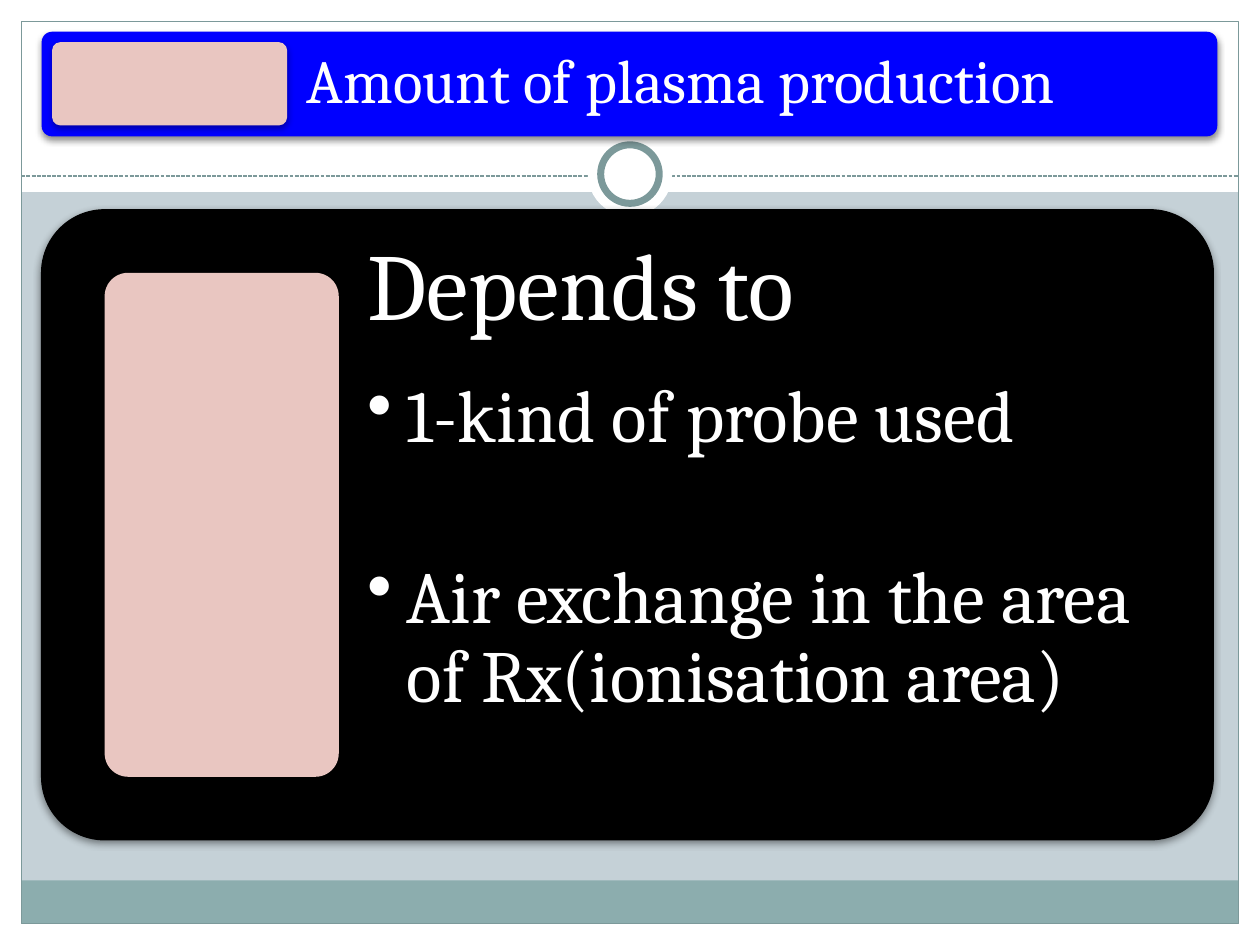
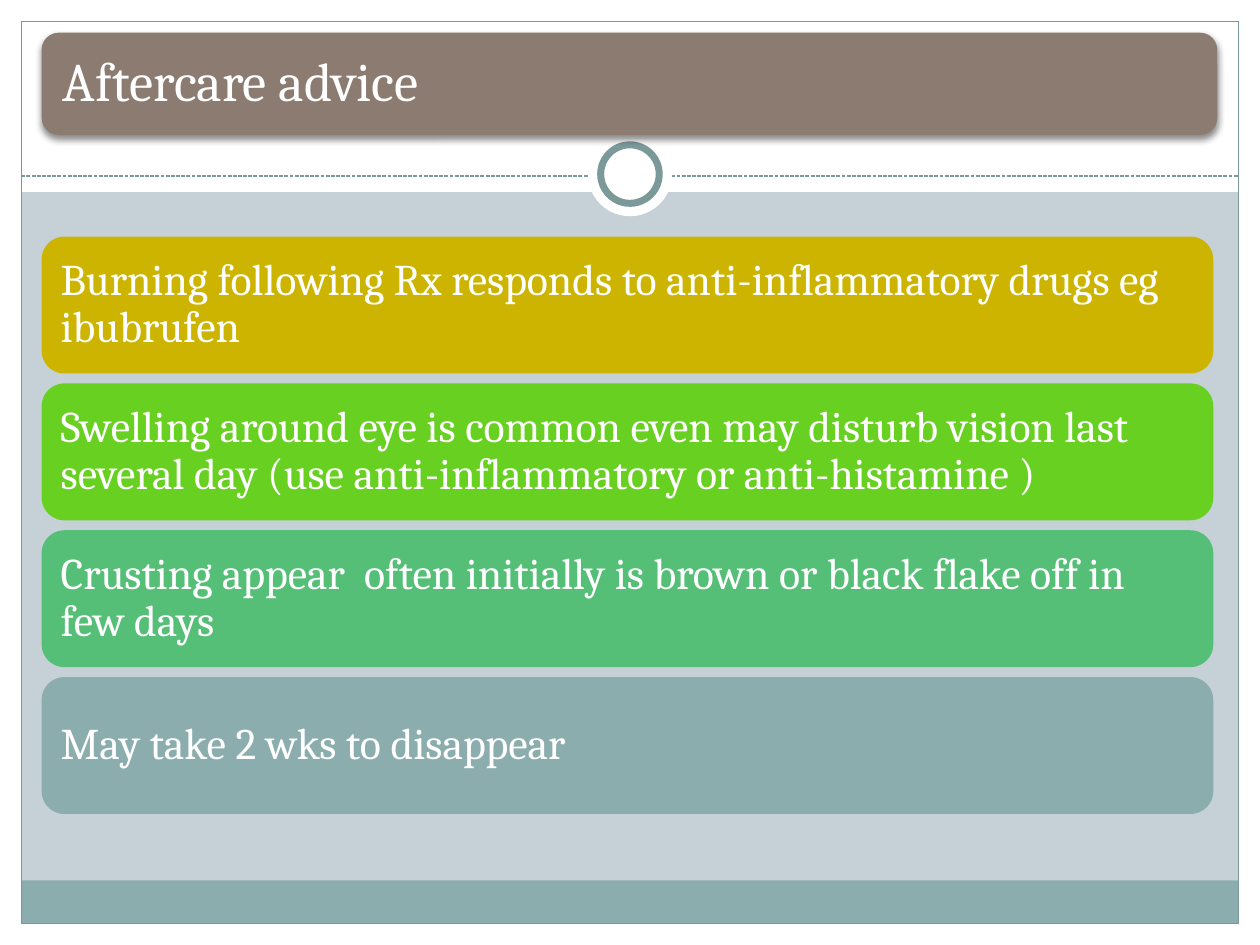
from lxml import etree
from pptx import Presentation
from pptx.dml.color import RGBColor
from pptx.enum.dml import MSO_LINE_DASH_STYLE as DASH
from pptx.enum.shapes import MSO_CONNECTOR as CONNECTOR, MSO_SHAPE as SHAPE
from pptx.enum.text import MSO_ANCHOR as ANCHOR, PP_ALIGN as ALIGN
from pptx.oxml import parse_xml
from pptx.oxml.ns import nsdecls, qn
from pptx.util import Cm, Pt

FONT = "Cambria"
WIDTH, HEIGHT = 25.4, 19.05
MARGIN = 0.43
LEFT = 0.84
HEADER_W, BODY_W = 23.7, 23.62
COLORS = {
    "white": "FFFFFF",
    "black": "000000",
    "background": "C5D1D7",
    "teal": "8CADAE",
    "outline": "7C999A",
    "blue": "0000FF",
    "pink": "E9C6C1",
    "brown": "8C7B70",
    "gold": "CCB400",
    "lime": "67D021",
    "green": "56BF77",
}


def rgb(name):
    return RGBColor.from_string(COLORS[name])


def add_shadow(sp, opacity):
    sp._element.spPr.append(parse_xml(
        f'<a:effectLst {nsdecls("a")}>'
        f'<a:outerShdw blurRad="{Pt(4)}" dist="{Pt(2)}" dir="5400000" rotWithShape="0">'
        f'<a:srgbClr val="{COLORS["black"]}"><a:alpha val="{opacity * 1000}"/></a:srgbClr>'
        '</a:outerShdw></a:effectLst>'))


def add_box(slide, kind, x, y, w, h, fill=None, line=None, weight=0.75,
            radius=None, shadow=None):
    """Add a preset shape, measured in cm; shadow is its opacity in percent."""
    sp = slide.shapes.add_shape(kind, Cm(x), Cm(y), Cm(w), Cm(h))
    if fill:
        sp.fill.solid()
        sp.fill.fore_color.rgb = rgb(fill)
    else:
        sp.fill.background()
    if line:
        sp.line.color.rgb = rgb(line)
        sp.line.width = Pt(weight)
    else:
        sp.line.fill.background()
    if radius is not None:
        sp.adjustments[0] = radius
    if shadow:
        add_shadow(sp, shadow)
    else:
        sp.shadow.inherit = False
    return sp


def set_frame(sp, anchor=ANCHOR.MIDDLE, left=0.25, top=0.25, right=0.25):
    tf = sp.text_frame
    tf.word_wrap = True
    tf.vertical_anchor = anchor
    tf.margin_left, tf.margin_right = Cm(left), Cm(right)
    tf.margin_top = tf.margin_bottom = Cm(top)
    return tf


def add_text(tf, text, size, color="white", before=None, bullet=False):
    """Write the next paragraph of a text frame."""
    p = tf.paragraphs[0] if not tf.text else tf.add_paragraph()
    p.alignment = ALIGN.LEFT
    p.line_spacing = 0.9
    if before is not None:
        p.space_before = Pt(before)
    if bullet:
        p.level = 1
        pPr = p._p.get_or_add_pPr()
        pPr.set("marL", str(Cm(0.79)))
        pPr.set("indent", str(-Cm(0.79)))
        etree.SubElement(pPr, qn("a:buChar")).set("char", "•")
    r = p.add_run()
    r.text = text
    r.font.name = FONT
    r.font.size = Pt(size)
    r.font.color.rgb = rgb(color)


def add_divider(slide, y):
    line = slide.shapes.add_connector(
        CONNECTOR.STRAIGHT, Cm(MARGIN), Cm(y), Cm(WIDTH - MARGIN), Cm(y))
    line.line.color.rgb = rgb("outline")
    line.line.width = Pt(0.75)
    line.line.dash_style = DASH.SQUARE_DOT
    etree.SubElement(line._element.spPr, qn("a:effectLst"))


def add_circle(slide, diameter, **style):
    """Add a circle centred on the ornament of the divider."""
    add_box(slide, SHAPE.OVAL, (WIDTH - diameter) / 2, 3.51 - diameter / 2,
            diameter, diameter, **style)


def add_base_slide(prs):
    """Add a slide with the white border, bottom band, frame and divider."""
    slide = prs.slides.add_slide(prs.slide_layouts[6])
    slide.background.fill.solid()
    slide.background.fill.fore_color.rgb = rgb("background")
    inner_w = WIDTH - 2 * MARGIN
    for x, y, w, h in ((0, HEIGHT - MARGIN, WIDTH, MARGIN),
                       (0, 0, WIDTH, 3.87),
                       (0, 0, MARGIN, HEIGHT),
                       (WIDTH - MARGIN, 0, MARGIN, HEIGHT)):
        add_box(slide, SHAPE.RECTANGLE, x, y, w, h, fill="white")
    add_box(slide, SHAPE.RECTANGLE, MARGIN, 17.75, inner_w, 0.87, fill="teal")
    add_box(slide, SHAPE.RECTANGLE, MARGIN, MARGIN, inner_w, HEIGHT - 2 * MARGIN,
            line="outline")
    add_divider(slide, 3.55)
    add_circle(slide, 1.7, fill="white")
    add_circle(slide, 1.18, fill="white", line="outline", weight=4)
    return slide


def add_header(slide, text, y, h, size, fill, radius=None, **frame):
    sp = add_box(slide, SHAPE.ROUNDED_RECTANGLE, LEFT, y, HEADER_W, h,
                 fill=fill, radius=radius, shadow=45)
    add_text(set_frame(sp, **frame), text, size)


def add_pink_block(slide, x, y, w, h, shadow):
    add_box(slide, SHAPE.ROUNDED_RECTANGLE, x, y, w, h,
            fill="pink", radius=0.1, shadow=shadow)


def add_plasma_slide(prs):
    slide = add_base_slide(prs)
    add_header(slide, "Amount of plasma production", 0.64, 2.11, 35, "blue",
               radius=0.1, left=5.28, right=0.32)
    add_pink_block(slide, 1.05, 0.85, 4.74, 1.68, shadow=35)

    panel = add_box(slide, SHAPE.ROUNDED_RECTANGLE, LEFT, 4.23, BODY_W, 12.7,
                    fill="black", line="black", radius=0.1, shadow=45)
    tf = set_frame(panel, anchor=ANCHOR.TOP, left=6.2, top=0.21, right=0.21)
    add_text(tf, "Depends to", 54)
    add_text(tf, "1-kind of probe used", 42, before=22, bullet=True)
    add_text(tf, "Air exchange in the area of Rx(ionisation area)", 42,
             before=58, bullet=True)
    add_pink_block(slide, 2.11, 5.5, 4.72, 10.16, shadow=45)


def add_aftercare_slide(prs):
    slide = add_base_slide(prs)
    add_header(slide, "Aftercare advice", 0.66, 2.06, 31, "brown",
               left=0.33, right=0.33)
    advice = (
        ("gold", "Burning following Rx responds to anti-inflammatory drugs eg ibubrufen"),
        ("lime", "Swelling around eye is common even may disturb vision last several day "
                 "(use anti-inflammatory or anti-histamine )"),
        ("green", "Crusting appear  often initially is brown or black flake off in few days"),
        ("teal", "May take 2 wks to disappear"),
    )
    top, pitch, row_h = 4.77, 2.96, 2.76
    for i, (fill, text) in enumerate(advice):
        row = add_box(slide, SHAPE.ROUNDED_RECTANGLE, LEFT, top + i * pitch,
                      BODY_W, row_h, fill=fill)
        add_text(set_frame(row), text, 25)


def main():
    prs = Presentation()
    prs.slide_width, prs.slide_height = Cm(WIDTH), Cm(HEIGHT)
    add_plasma_slide(prs)
    add_aftercare_slide(prs)
    prs.save("out.pptx")


if __name__ == "__main__":
    main()
